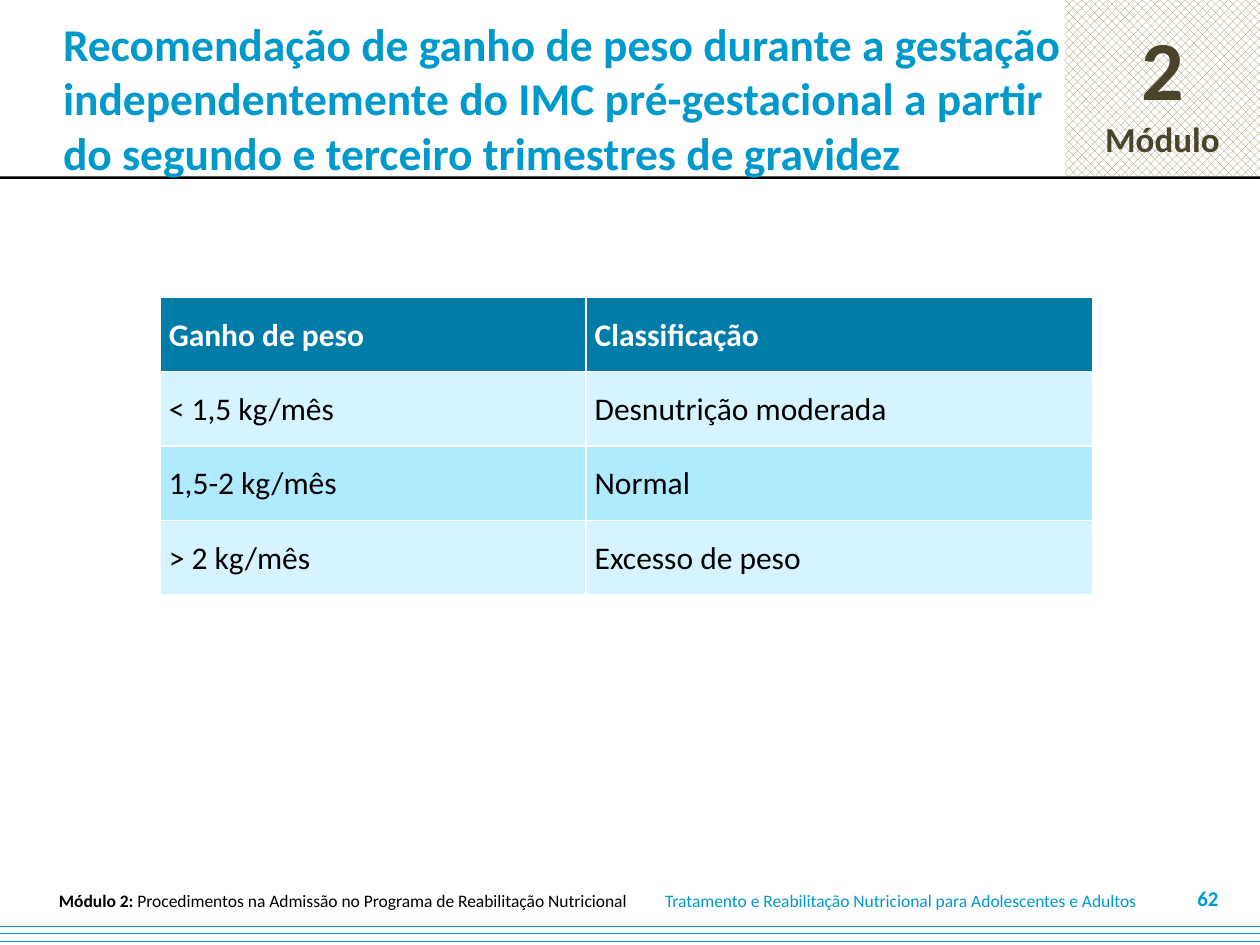
from lxml import etree
from pptx import Presentation
from pptx.dml.color import RGBColor
from pptx.enum.dml import MSO_PATTERN
from pptx.enum.shapes import MSO_SHAPE
from pptx.enum.text import MSO_ANCHOR, MSO_AUTO_SIZE, PP_ALIGN
from pptx.oxml.ns import qn
from pptx.util import Pt

PX = 9144  # 100 px to the inch
RECTANGLE = MSO_SHAPE.RECTANGLE
MIDDLE = MSO_ANCHOR.MIDDLE
LEFT, CENTER, RIGHT, JUSTIFY = PP_ALIGN.LEFT, PP_ALIGN.CENTER, PP_ALIGN.RIGHT, PP_ALIGN.JUSTIFY
COLORS = {
    "blue": "0099CC", "header": "007CA8", "light": "D5F4FF", "medium": "AFEAFF",
    "olive": "948A54", "dark olive": "4A452A", "black": "000000", "white": "FFFFFF",
}


def color(name):
    return RGBColor.from_string(COLORS[name])


def write(para, parts, align):
    """Add runs given as (text, size, color, bold) to a paragraph."""
    para.alignment = align
    for text, size, tint, bold in parts:
        span = para.add_run()
        span.text = text
        span.font.name = "Calibri"
        span.font.size = Pt(size)
        span.font.bold = bold
        span.font.color.rgb = color(tint)


deck = Presentation()
deck.slide_width, deck.slide_height = 1000 * PX, 750 * PX
page = deck.slides.add_slide(deck.slide_layouts[5])

# Module badge, rule under the title and footer band
bands = []
for left, top, width, height, pattern, tint in [
    (845, 0, 155, 140, MSO_PATTERN.PERCENT_50, "olive"),
    (-2, 140, 1002, 2, None, "black"),
    (0, 729, 1000, 21, MSO_PATTERN.DASHED_HORIZONTAL, "blue"),
]:
    band = page.shapes.add_shape(RECTANGLE, left * PX, top * PX, width * PX, height * PX)
    band.shadow.inherit = False
    band.line.fill.background()
    if pattern is None:
        band.fill.solid()
    else:
        band.fill.patterned()
        band.fill.pattern = pattern
        band.fill.back_color.rgb = color("white")
    band.fill.fore_color.rgb = color(tint)
    bands.append(band)

badge = bands[0].text_frame
badge.vertical_anchor = MIDDLE
write(badge.paragraphs[0], [("2", 48, "dark olive", True)], CENTER)
write(badge.add_paragraph(), [("Módulo", 20, "dark olive", True)], CENTER)

# Footer texts and page number
for left, top, width, height, wrap, align, parts in [
    (518, 705, 405, 20, False, LEFT,
     [("Tratamento e Reabilitação Nutricional para Adolescentes e Adultos", 10, "blue", False)]),
    (29, 705, 486, 20, False, CENTER,
     [("Módulo 2: ", 10, "black", True),
      ("Procedimentos na Admissão no Programa de Reabilitação Nutricional", 10, "black", False)]),
    (927, 700, 50, 25, True, RIGHT, [("62", 12, "blue", True)]),
]:
    box = page.shapes.add_textbox(left * PX, top * PX, width * PX, height * PX)
    box.text_frame.word_wrap = wrap
    box.text_frame.vertical_anchor = MIDDLE
    write(box.text_frame.paragraphs[0], parts, align)

# Title, in front of the rule it touches
title = page.shapes.title
title.left, title.top, title.width, title.height = 0, 0, 858 * PX, 155 * PX
frame = title.text_frame
frame.auto_size = MSO_AUTO_SIZE.NONE
frame.word_wrap = True
frame.vertical_anchor = MIDDLE
frame.margin_left, frame.margin_right = 50 * PX, 10 * PX
frame.margin_top = frame.margin_bottom = 5 * PX
write(frame.paragraphs[0], [(
    "Recomendação de ganho de peso durante a gestação independentemente do IMC "
    "pré-gestacional a partir do segundo e terceiro trimestres de gravidez",
    26, "blue", True)], LEFT)
title.element.getparent().append(title.element)

# Weight gain table
rows = [
    ("Ganho de peso", "Classificação"),
    ("< 1,5 kg/mês", "Desnutrição moderada"),
    ("1,5-2 kg/mês", "Normal"),
    ("> 2 kg/mês", "Excesso de peso"),
]
fills = ["header", "light", "medium", "light"]
table = page.shapes.add_table(4, 2, 127 * PX, 236 * PX, 740 * PX, 236 * PX).table
table.columns[0].width, table.columns[1].width = 338 * PX, 402 * PX
for r, texts in enumerate(rows):
    table.rows[r].height = 59 * PX
    for c, text in enumerate(texts):
        cell = table.cell(r, c)
        cell.vertical_anchor = MIDDLE
        cell.margin_left = cell.margin_right = 7 * PX
        cell.margin_top = cell.margin_bottom = 0
        para = cell.text_frame.paragraphs[0]
        para.line_spacing = 1.05
        para.space_before = para.space_after = Pt(3)
        write(para, [(text, 18, "black" if r else "white", r == 0)], JUSTIFY)
        # Borders come before the fill in the cell properties
        props = cell._tc.get_or_add_tcPr()
        for side in ("a:lnL", "a:lnR", "a:lnT", "a:lnB"):
            border = etree.SubElement(props, qn(side), w=str(Pt(1)))
            solid = etree.SubElement(border, qn("a:solidFill"))
            etree.SubElement(solid, qn("a:srgbClr"), val=COLORS["white"])
        cell.fill.solid()
        cell.fill.fore_color.rgb = color(fills[r])

deck.save("out.pptx")
